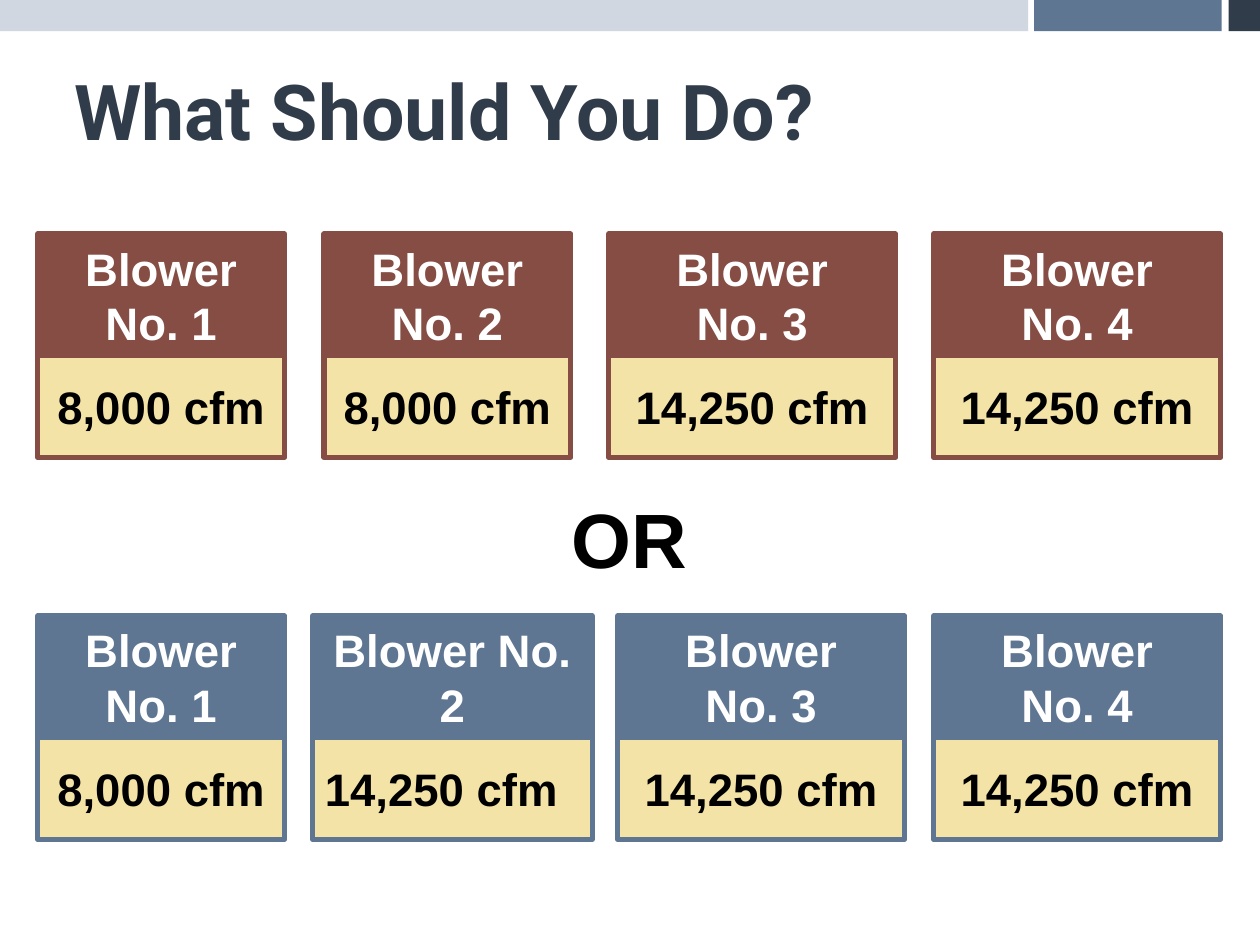
from dataclasses import dataclass

from pptx import Presentation
from pptx.dml.color import RGBColor
from pptx.enum.shapes import MSO_SHAPE
from pptx.enum.text import MSO_ANCHOR, MSO_AUTO_SIZE, PP_ALIGN
from pptx.util import Cm, Pt

RECTANGLE = MSO_SHAPE.RECTANGLE
MIDDLE = MSO_ANCHOR.MIDDLE
NO_AUTOFIT = MSO_AUTO_SIZE.NONE
GROW = MSO_AUTO_SIZE.SHAPE_TO_FIT_TEXT
LEFT, CENTER = PP_ALIGN.LEFT, PP_ALIGN.CENTER


@dataclass(frozen=True)
class Theme:
    navy: str = "313C4A"
    slate: str = "5F7693"
    mist: str = "D0D7E0"
    brick: str = "864D44"
    cream: str = "F3E3A6"
    white: str = "FFFFFF"
    black: str = "000000"
    title_font: str = "Roboto"
    body_font: str = "Arial"
    large: int = 44
    label: int = 26
    border: int = 3


theme = Theme()


def add_rectangle(left, top, width, height, fill, line=None):
    box = page.shapes.add_shape(RECTANGLE, Cm(left), Cm(top), Cm(width), Cm(height))
    box.shadow.inherit = False
    box.fill.solid()
    box.fill.fore_color.rgb = RGBColor.from_string(fill)
    if line:
        box.line.color.rgb = RGBColor.from_string(line)
        box.line.width = Pt(theme.border)
    else:
        box.line.fill.background()
    return box


def write_text(box, text, size, color, font, align=CENTER):
    frame = box.text_frame
    frame.word_wrap = True
    frame.vertical_anchor = MIDDLE
    para = frame.paragraphs[0]
    para.alignment = align
    for number, line in enumerate(text.split("\n")):
        if number:
            para.add_line_break()
        span = para.add_run()
        span.text = line
        span.font.name = font
        span.font.size = Pt(size)
        span.font.bold = True
        span.font.color.rgb = RGBColor.from_string(color)


deck = Presentation()
deck.slide_width, deck.slide_height = Cm(25.4), Cm(19.05)
page = deck.slides.add_slide(deck.slide_layouts[5])

for left, width, color in [
    (20.85, 3.78, theme.slate),
    (24.77, 0.63, theme.navy),
    (0, 20.73, theme.mist),
]:
    add_rectangle(left, 0, width, 0.63, color)

title = page.shapes.title
title.left, title.top, title.width, title.height = Cm(1.24), Cm(1.22), Cm(22.81), Cm(1.98)
title.text_frame.auto_size = NO_AUTOFIT
write_text(title, "What Should You Do?", theme.large, theme.navy, theme.title_font, LEFT)

choice = page.shapes.add_textbox(Cm(11.28), Cm(9.78), Cm(2.87), Cm(2.13))
write_text(choice, "OR", theme.large, theme.black, theme.body_font, LEFT)
choice.text_frame.word_wrap = False
choice.text_frame.auto_size = GROW

names = ["Blower No. 1", "Blower No. 2", "Blower\nNo. 3", "Blower\nNo. 4"]
small, large = "8,000 cfm", "14,250 cfm"
options = [
    (4.72, theme.brick, [
        (0.76, 4.98, small, CENTER),
        (6.53, 4.98, small, CENTER),
        (12.27, 5.79, large, CENTER),
        (18.82, 5.79, large, CENTER),
    ]),
    (12.42, theme.slate, [
        (0.76, 4.98, small, CENTER),
        (6.3, 5.64, large, LEFT),
        (12.45, 5.79, large, CENTER),
        (18.82, 5.79, large, CENTER),
    ]),
]
for top, color, blowers in options:
    for name, (left, width, flow, align) in zip(names, blowers):
        header = add_rectangle(left, top, width, 2.46, color, color)
        write_text(header, name, theme.label, theme.white, theme.body_font)
        capacity = add_rectangle(left, top + 2.44, width, 2.06, theme.cream, color)
        write_text(capacity, flow, theme.label, theme.black, theme.body_font, align)

deck.save("out.pptx")
